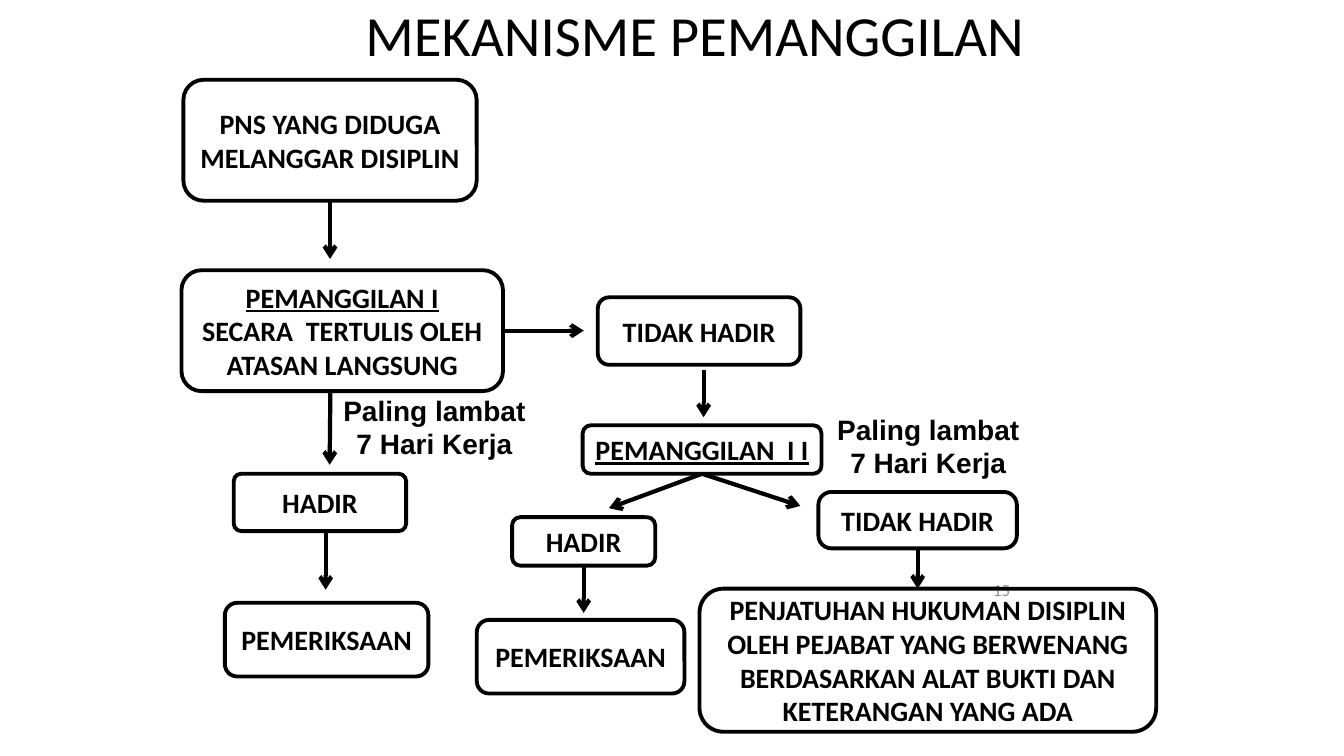
from lxml import etree
from pptx import Presentation
from pptx.dml.color import RGBColor
from pptx.enum.shapes import MSO_CONNECTOR as Line, MSO_SHAPE as Shape
from pptx.enum.text import MSO_ANCHOR as Anchor, MSO_AUTO_SIZE as AutoSize, PP_ALIGN as Align
from pptx.oxml.ns import qn
from pptx.util import Pt

BLACK = RGBColor(0x00, 0x00, 0x00)
GREY = RGBColor(0x89, 0x89, 0x89)

TITLE = "MEKANISME PEMANGGILAN"
PAGE_NUMBER = "15"
DEADLINE = ["Paling lambat", "7 Hari Kerja"]
BOTTOM, RIGHT = 2, 3

STEPS = {
    "suspect": (["PNS YANG DIDUGA MELANGGAR DISIPLIN"], (131, 57, 209.5, 86.4)),
    "summons 1": (["PEMANGGILAN I", "SECARA  TERTULIS OLEH ATASAN LANGSUNG"],
                  (129.6, 193, 229.7, 86.4)),
    "present 1": (["HADIR"], (167, 338.4, 123.1, 41)),
    "absent 1": (["TIDAK HADIR"], (427, 212.4, 144.7, 48.2)),
    "inquiry 2": (["PEMERIKSAAN"], (340.6, 442.8, 148.3, 52.6)),
    "summons 2": (["PEMANGGILAN  I I"], (416.2, 303.8, 170.6, 34.6)),
    "present 2": (["HADIR"], (365.8, 369.4, 102.2, 34.6)),
    "inquiry 1": (["PEMERIKSAAN"], (160.6, 430.6, 145.4, 52.6)),
    "penalty": (["PENJATUHAN HUKUMAN DISIPLIN OLEH PEJABAT YANG BERWENANG "
                 "BERDASARKAN ALAT BUKTI DAN KETERANGAN YANG ADA"],
                (499.7, 420.5, 326.2, 102.2)),
    "absent 2": (["TIDAK HADIR"], (584.6, 351.4, 141.8, 40.3)),
}
CORNERS = {"present 1": 0.13, "absent 2": 0.23}
UNDERLINED = ("summons 1", "summons 2")

JOINED_ARROWS = [
    ("suspect", BOTTOM, (235.75, 185)),
    ("summons 1", RIGHT, (417, 236.2)),
    ("summons 2", BOTTOM, (435, 363)),
    ("summons 2", BOTTOM, (571.7, 361.4)),
    ("present 2", BOTTOM, (416.9, 437.8)),
    ("absent 2", BOTTOM, (655.5, 420.5)),
]
FREE_ARROWS = [
    ((236, 279.4), (235.5, 332)),
    ((502.6, 264.2), (502.6, 298)),
    ((232.6, 378), (232.6, 421.2)),
]
DEADLINE_PLACES = [(236.2, 277.2, 148.3, 55.4), (580.3, 290.9, 165.6, 55.4)]


def write(frame, lines, size, font="Calibri", bold=True, color=BLACK, align=Align.CENTER):
    frame.word_wrap = True
    frame.text = "\n".join(lines)
    for paragraph in frame.paragraphs:
        paragraph.alignment = align
        paragraph.font.size = Pt(size)
        paragraph.font.name = font
        paragraph.font.bold = bold
        paragraph.font.color.rgb = color


def add_text(slide, place, lines, size, **style):
    frame = slide.shapes.add_textbox(*map(Pt, place)).text_frame
    write(frame, lines, size, **style)
    return frame


def add_step(slide, key, lines, place):
    step = slide.shapes.add_shape(Shape.ROUNDED_RECTANGLE, *map(Pt, place))
    step.shadow.inherit = False
    step.fill.background()
    step.line.color.rgb = BLACK
    step.line.width = Pt(2.75)
    if key in CORNERS:
        step.adjustments[0] = CORNERS[key]
    frame = step.text_frame
    frame.vertical_anchor = Anchor.MIDDLE
    write(frame, lines, 20)
    if key in UNDERLINED:
        frame.paragraphs[0].runs[0].font.underline = True
    return step


def add_arrow(slide, start, end):
    arrow = slide.shapes.add_connector(Line.STRAIGHT, *map(Pt, start + end))
    arrow.line.color.rgb = BLACK
    arrow.line.width = Pt(3)
    etree.SubElement(arrow.line._get_or_add_ln(), qn("a:tailEnd"), type="arrow")
    etree.SubElement(arrow._element.spPr, qn("a:effectLst"))
    return arrow


def main():
    deck = Presentation()
    deck.slide_width, deck.slide_height = Pt(960), Pt(540)
    slide = deck.slides.add_slide(deck.slide_layouts[5])

    title = slide.shapes.title
    title.left, title.top, title.width, title.height = map(Pt, (247, -3.6, 499, 56.2))
    write(title.text_frame, [TITLE], 40.5, bold=False)
    title.text_frame.auto_size = AutoSize.NONE
    title.text_frame.vertical_anchor = Anchor.TOP

    number = add_text(slide, (690.5, 406.1, 36, 31), [PAGE_NUMBER], 12,
                      bold=False, color=GREY, align=Align.RIGHT)
    number.vertical_anchor = Anchor.MIDDLE
    number.margin_left = number.margin_right = Pt(5)
    number.margin_top = number.margin_bottom = Pt(3)

    steps = {key: add_step(slide, key, *content) for key, content in STEPS.items()}
    for key, side, end in JOINED_ARROWS:
        add_arrow(slide, end, end).begin_connect(steps[key], side)
    for start, end in FREE_ARROWS:
        add_arrow(slide, start, end)
    for place in DEADLINE_PLACES:
        add_text(slide, place, DEADLINE, 20, font="Arial")

    deck.save("out.pptx")


if __name__ == "__main__":
    main()
